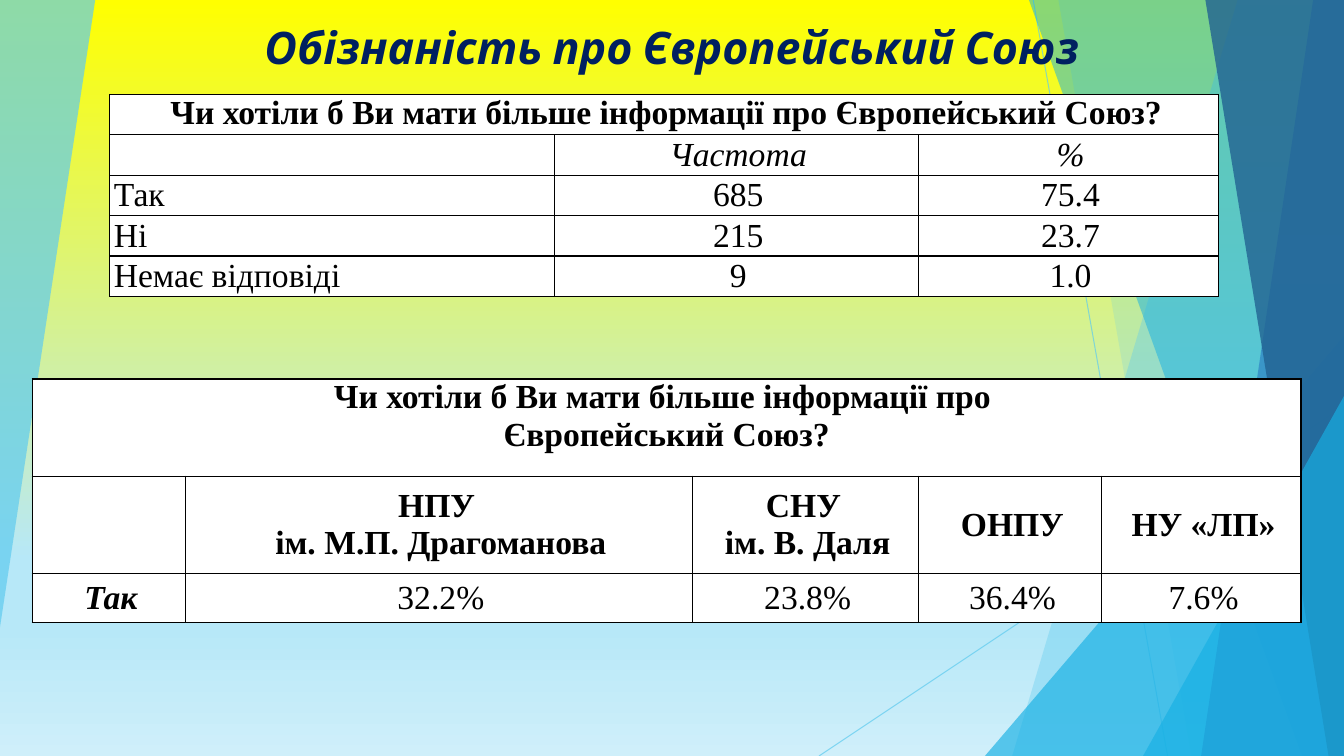
from lxml import etree
from pptx import Presentation
from pptx.dml.color import RGBColor
from pptx.enum.shapes import MSO_CONNECTOR, MSO_SHAPE
from pptx.enum.text import MSO_ANCHOR, MSO_AUTO_SIZE, PP_ALIGN
from pptx.oxml.ns import qn
from pptx.util import Pt

STRAIGHT = MSO_CONNECTOR.STRAIGHT
TRIANGLE = MSO_SHAPE.ISOSCELES_TRIANGLE
TOP, MIDDLE = MSO_ANCHOR.TOP, MSO_ANCHOR.MIDDLE
LEFT, CENTER = PP_ALIGN.LEFT, PP_ALIGN.CENTER
GROW = MSO_AUTO_SIZE.SHAPE_TO_FIT_TEXT

SKY = RGBColor(0x5F, 0xCB, 0xEF)
AZURE = RGBColor(0x17, 0xB0, 0xE4)
BLUE = RGBColor(0x2E, 0x83, 0xC3)
DEEP = RGBColor(0x22, 0x62, 0x92)
NAVY = RGBColor(0x00, 0x20, 0x60)
BLACK = RGBColor(0x00, 0x00, 0x00)
WHITE = RGBColor(0xFF, 0xFF, 0xFF)
YELLOW = RGBColor(0xFF, 0xFF, 0x00)
PALE = RGBColor(0xB7, 0xE8, 0xF8)
MIST = RGBColor(0xCF, 0xEF, 0xFA)

WIDE, HIGH = 960, 540
SERIF = "Times New Roman"
TITLE = "Обізнаність про Європейський Союз"
STOPS = [(0, YELLOW), (74, PALE), (83, PALE), (100, MIST)]

# Start and end of each thin line
LINES = [((738, 0), (834, HIGH)), ((WIDE, 290), (585, HIGH))]

# Bands reach the right edge: x at top, x at bottom, colour, opacity
# Wedges sit in the lower right corner: left, top, colour, opacity
DECOR = [
    ("band", 884, 723, SKY, 36),
    ("band", 756, 851, SKY, 20),
    ("wedge", 703.5, 240, AZURE, 66),
    ("band", 735, 930, AZURE, 50),
    ("band", 938, 858, BLUE, 70),
    ("band", 861, 949, DEEP, 80),
    ("wedge", 816.5, 283, AZURE, 66),
]

# Cell styles: bold, italic, alignment, anchor, indent
HEAD = (True, False, CENTER, TOP, 3)
FLUSH = (True, False, CENTER, TOP, 0)
BOLD = (True, False, CENTER, MIDDLE, 3)
SLANT = (False, True, CENTER, MIDDLE, 3)
BOTH = (True, True, CENTER, MIDDLE, 3)
PLAIN = (False, False, CENTER, MIDDLE, 3)
NAME = (False, False, LEFT, MIDDLE, 3)

# Each row: style of first cell, style of the others, texts
TABLES = [
    dict(left=23, top=270.7, cols=[109.4, 362, 162, 130.6, 142.4],
         rows=[69.5, 69.5, 34.8], cells=[
        (FLUSH, FLUSH, ["Чи хотіли б Ви мати більше інформації про \nЄвропейський Союз?"]),
        (BOLD, BOLD, ["", "НПУ \nім. М.П. Драгоманова", "СНУ \nім. В. Даля",
                      "ОНПУ", "НУ «ЛП»"]),
        (BOTH, PLAIN, ["Так", "32.2%", "23.8%", "36.4%", "7.6%"]),
    ]),
    dict(left=78.3, top=67.5, cols=[317.6, 260, 214.6], rows=[28.8] * 5, cells=[
        (HEAD, HEAD, ["Чи хотіли б Ви мати більше інформації про Європейський Союз?"]),
        (SLANT, SLANT, ["", "Частота", "%"]),
        (NAME, PLAIN, ["Так", "685", "75.4"]),
        (NAME, PLAIN, ["Ні", "215", "23.7"]),
        (NAME, PLAIN, ["Немає відповіді", "9", "1.0"]),
    ]),
]


def tint(node, color, alpha=100):
    clr = etree.SubElement(node, qn("a:srgbClr"), val=str(color))
    if alpha < 100:
        etree.SubElement(clr, qn("a:alpha"), val=str(alpha * 1000))


def fade(shape, alpha):
    clr = shape.element.spPr.find(".//" + qn("a:srgbClr"))
    etree.SubElement(clr, qn("a:alpha"), val=str(alpha * 1000))


def paint(shape, color, alpha):
    shape.shadow.inherit = False
    shape.fill.solid()
    shape.fill.fore_color.rgb = color
    shape.line.fill.background()
    fade(shape, alpha)


def outline(shapes, points, color, alpha):
    pen = shapes.build_freeform(Pt(points[0][0]), Pt(points[0][1]))
    pen.add_line_segments([(Pt(x), Pt(y)) for x, y in points[1:]], close=True)
    paint(pen.convert_to_shape(), color, alpha)


def style_run(run, size, font, color, bold, italic):
    run.font.size, run.font.name = Pt(size), font
    run.font.color.rgb = color
    run.font.bold, run.font.italic = bold, italic


def border(cell):
    props = cell._tc.get_or_add_tcPr()
    for i, side in enumerate(("lnL", "lnR", "lnT", "lnB")):
        line = etree.Element(qn("a:" + side), w=str(Pt(1)))
        tint(etree.SubElement(line, qn("a:solidFill")), BLACK)
        props.insert(i, line)


def fill_cell(cell, text, style):
    bold, italic, align, anchor, indent = style
    cell.margin_left = cell.margin_right = cell.margin_top = cell.margin_bottom = 0
    cell.vertical_anchor = anchor
    cell.fill.solid()
    cell.fill.fore_color.rgb = WHITE
    border(cell)
    if not text:
        return
    para = cell.text_frame.paragraphs[0]
    para.alignment = align
    para._p.get_or_add_pPr().set("marL", str(Pt(indent)))
    for i, part in enumerate(text.split("\n")):
        if i:
            para.add_line_break()
        run = para.add_run()
        run.text = part
        style_run(run, 24, SERIF, BLACK, bold, italic)


def draw_table(shapes, left, top, cols, rows, cells):
    frame = shapes.add_table(len(rows), len(cols), Pt(left), Pt(top),
                             Pt(sum(cols)), Pt(sum(rows)))
    table = frame.table
    table.first_row = table.horz_banding = False
    for col, width in zip(table.columns, cols):
        col.width = Pt(width)
    for row, height in zip(table.rows, rows):
        row.height = Pt(height)
    table.cell(0, 0).merge(table.cell(0, len(cols) - 1))
    for r, (first, rest, texts) in enumerate(cells):
        for c in range(len(cols)):
            text = texts[c] if c < len(texts) else ""
            fill_cell(table.cell(r, c), text, rest if c else first)


def main():
    prs = Presentation()
    prs.slide_width, prs.slide_height = Pt(WIDE), Pt(HIGH)
    slide = prs.slides.add_slide(prs.slide_layouts[5])
    shapes = slide.shapes

    # Background gradient
    back = slide.background.fill
    back.gradient()
    back.gradient_angle = 270
    stops = slide.element.find(".//" + qn("a:gsLst"))
    for old in list(stops):
        stops.remove(old)
    for pos, color in STOPS:
        tint(etree.SubElement(stops, qn("a:gs"), pos=str(pos * 1000)), color)

    # Side decoration
    outline(shapes, [(0, 0), (68, 0), (0, 448)], SKY, 70)
    for (x1, y1), (x2, y2) in LINES:
        line = shapes.add_connector(STRAIGHT, Pt(x1), Pt(y1), Pt(x2), Pt(y2))
        line.line.color.rgb = SKY
        line.line.width = Pt(0.75)
        fade(line, 70)
        etree.SubElement(line.element.spPr, qn("a:effectLst"))
    for kind, a, b, color, alpha in DECOR:
        if kind == "band":
            outline(shapes, [(a, 0), (WIDE, 0), (WIDE, HIGH), (b, HIGH)], color, alpha)
        else:
            wedge = shapes.add_shape(TRIANGLE, Pt(a), Pt(b), Pt(WIDE - a), Pt(HIGH - b))
            wedge.adjustments[0] = 1
            paint(wedge, color, alpha)

    # Title, brought in front of the decoration
    title = shapes.title
    title.element.getparent().append(title.element)
    title.left, title.top, title.width, title.height = Pt(0), Pt(10.8), Pt(WIDE), Pt(46)
    frame = title.text_frame
    frame.word_wrap, frame.auto_size, frame.vertical_anchor = True, GROW, TOP
    para = frame.paragraphs[0]
    para.alignment = CENTER
    run = para.add_run()
    run.text = TITLE
    style_run(run, 32, "Cabin", NAVY, True, True)

    # Tables
    for table in TABLES:
        draw_table(shapes, **table)

    prs.save("out.pptx")


if __name__ == "__main__":
    main()
